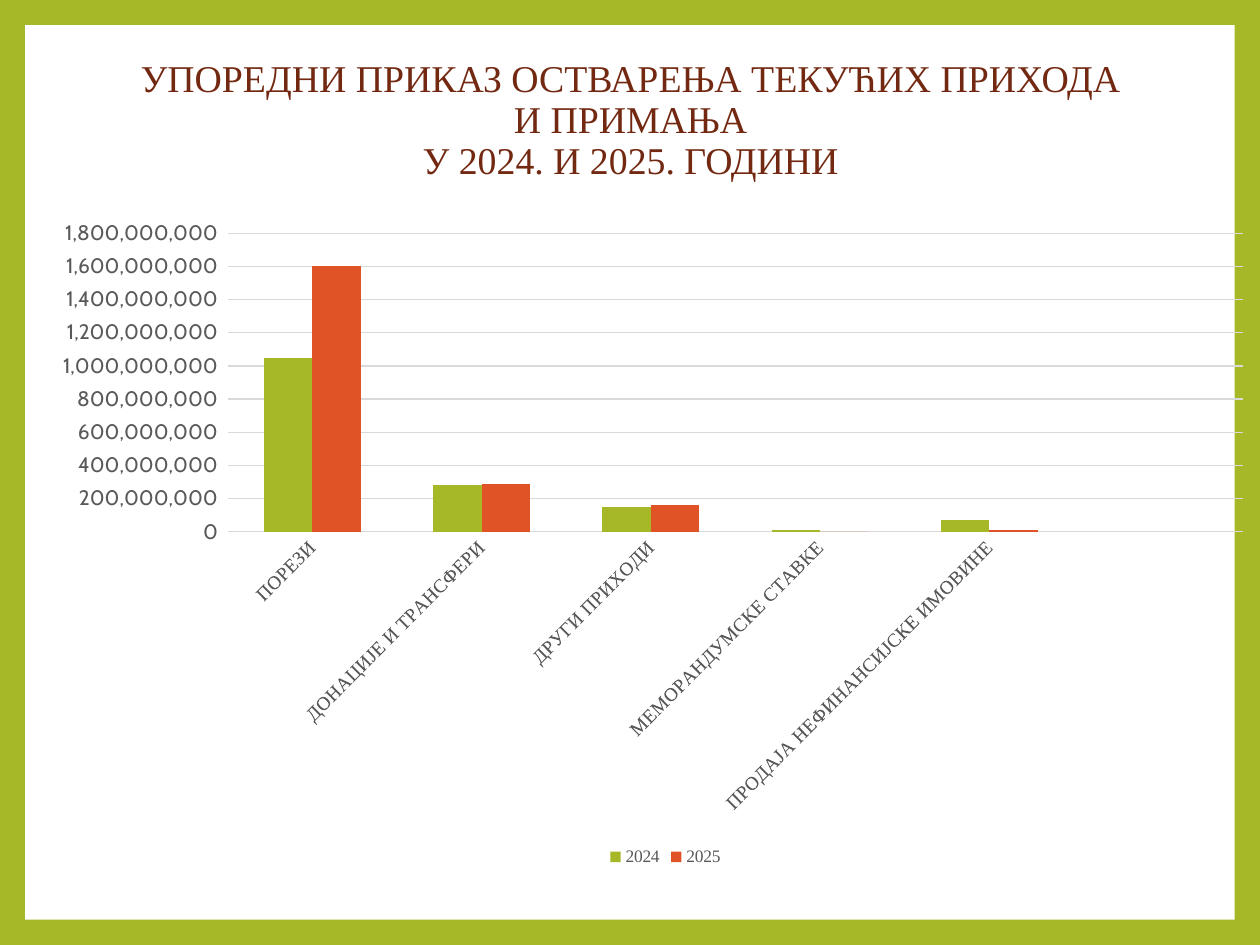
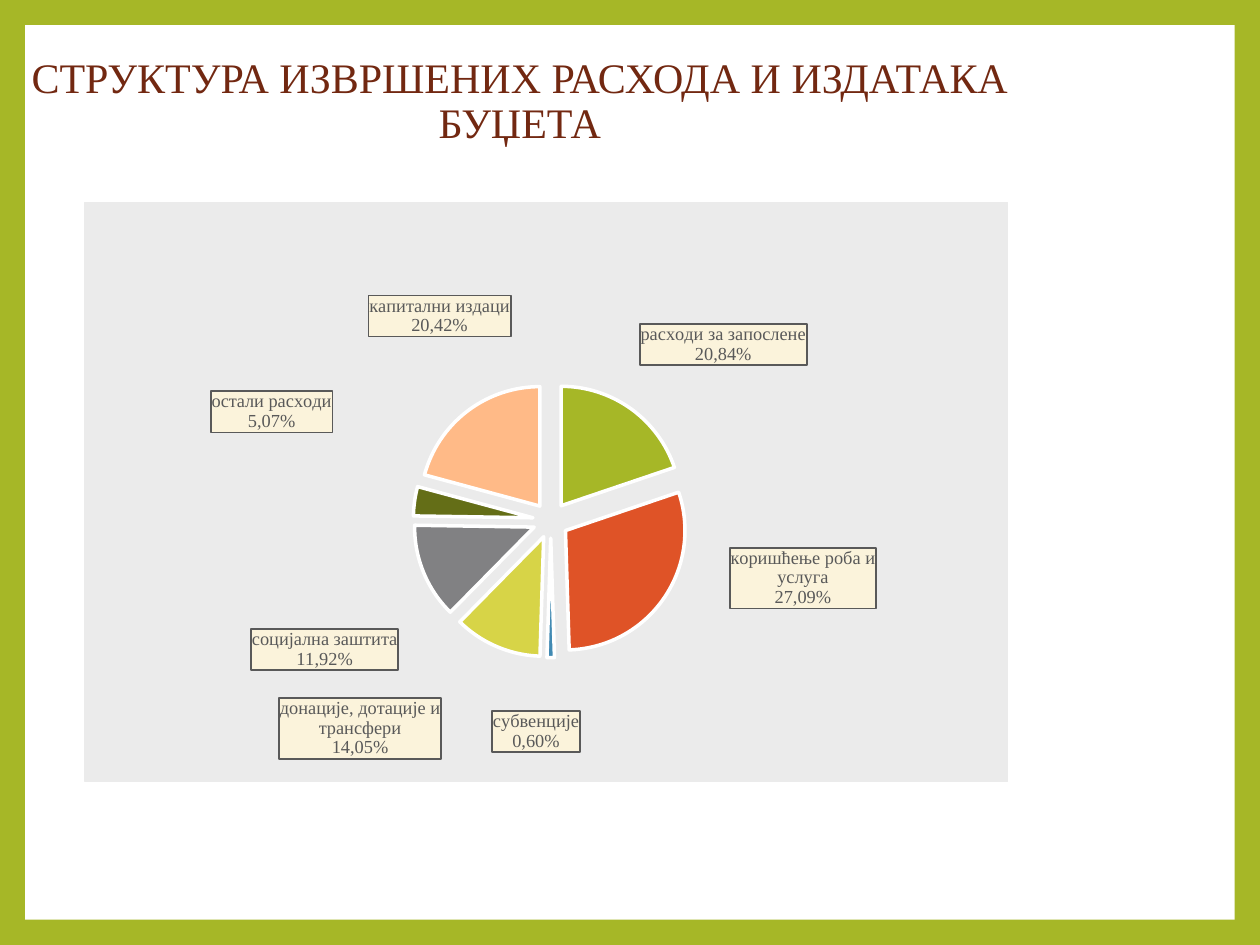
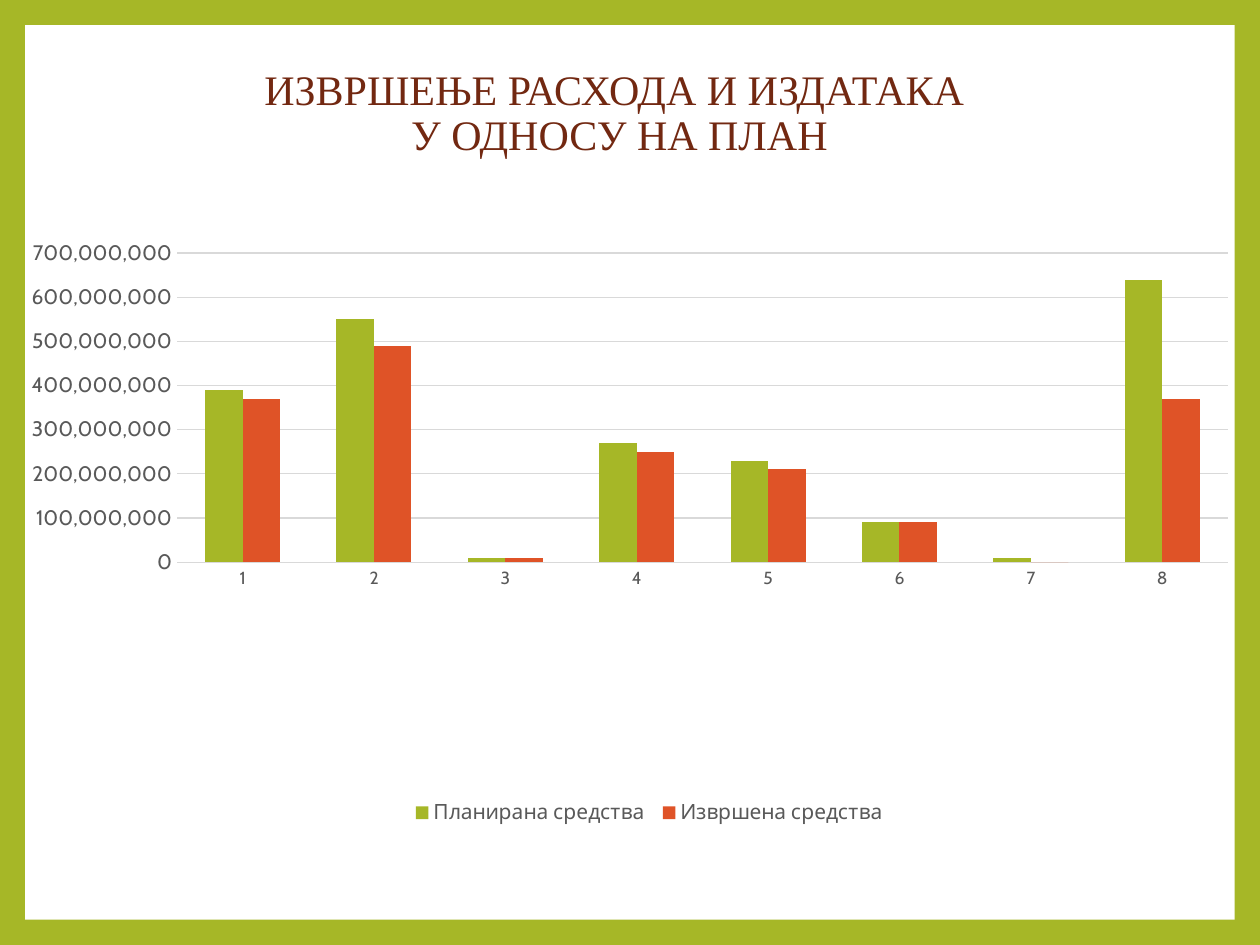
from pptx import Presentation
from pptx.chart.data import CategoryChartData
from pptx.dml.color import RGBColor
from pptx.enum.chart import XL_CHART_TYPE, XL_LABEL_POSITION, XL_LEGEND_POSITION, XL_TICK_MARK
from pptx.enum.shapes import MSO_SHAPE
from pptx.enum.text import MSO_ANCHOR, MSO_AUTO_SIZE, PP_ALIGN
from pptx.oxml import parse_xml
from pptx.oxml.ns import nsdecls, qn
from pptx.util import Inches, Pt

COLUMNS = XL_CHART_TYPE.COLUMN_CLUSTERED
PIE = XL_CHART_TYPE.PIE
OUTSIDE = XL_LABEL_POSITION.OUTSIDE_END
BOTTOM = XL_LEGEND_POSITION.BOTTOM
NO_TICK = XL_TICK_MARK.NONE

GREEN = RGBColor(0xA6, 0xB7, 0x27)
ORANGE = RGBColor(0xDF, 0x53, 0x27)
BLUE = RGBColor(0x41, 0x8A, 0xB3)
YELLOW = RGBColor(0xD7, 0xD4, 0x47)
STEEL = RGBColor(0x81, 0x81, 0x83)
OLIVE = RGBColor(0x64, 0x6E, 0x17)
PEACH = RGBColor(0xFF, 0xBA, 0x87)
BROWN = RGBColor(0x72, 0x28, 0x11)
WHITE = RGBColor(0xFF, 0xFF, 0xFF)
BLACK = RGBColor(0, 0, 0)
TEXT_GREY = RGBColor(0x59, 0x59, 0x59)
GRID_GREY = RGBColor(0xD9, 0xD9, 0xD9)
PANEL_GREY = RGBColor(0xEB, 0xEB, 0xEB)
CREAM = RGBColor(0xFB, 0xF3, 0xDB)
SERIF = "Times New Roman"
SANS = "Cabin"


def set_values(target, values):
    for name, value in values.items():
        if name == "color":
            target.color.rgb = value
        else:
            setattr(target, name, value)


def chart_xml(kind, **values):
    if kind == "box":
        return parse_xml(
            f'<c:spPr {nsdecls("c", "a")}>'
            f'<a:solidFill><a:srgbClr val="{values["fill"]}"/></a:solidFill>'
            f'<a:ln w="{Pt(values["width"])}"><a:solidFill><a:srgbClr val="{values["line"]}"/>'
            '</a:solidFill></a:ln></c:spPr>')
    parts = "".join(f'<c:{name} val="{value}"/>' for name, value in values.items())
    return parse_xml(f'<c:layout {nsdecls("c")}><c:manualLayout>{parts}</c:manualLayout></c:layout>')


deck = Presentation()
deck.slide_width, deck.slide_height = Inches(10), Inches(7.5)
background = deck.slide_master.background.fill
background.solid()
background.fore_color.rgb = GREEN

titles = [
    ("УПОРЕДНИ ПРИКАЗ ОСТВАРЕЊА ТЕКУЋИХ ПРИХОДА И ПРИМАЊА\vУ 2024. И 2025. ГОДИНИ",
     (0.88, 0.42, 8.25, 1.08), 21.6),
    ("СТРУКТУРА ИЗВРШЕНИХ РАСХОДА И ИЗДАТАКА БУЏЕТА", (0, 0.02, 8.25, 1.59), 24),
    ("ИЗВРШЕЊЕ РАСХОДА И ИЗДАТАКА\v У ОДНОСУ НА ПЛАН", (0.75, 0.37, 8.25, 1.08), 24),
]
pages = []
for text, place, size in titles:
    page = deck.slides.add_slide(deck.slide_layouts[5])
    title = page.shapes.title
    title.left, title.top, title.width, title.height = map(Inches, place)
    title.text_frame.text = text
    set_values(title.text_frame, {"word_wrap": True, "auto_size": MSO_AUTO_SIZE.NONE,
                                  "vertical_anchor": MSO_ANCHOR.MIDDLE})
    para = title.text_frame.paragraphs[0]
    set_values(para, {"alignment": PP_ALIGN.CENTER, "line_spacing": 0.9})
    for span in para.runs:
        set_values(span.font, {"name": SERIF, "size": Pt(size), "color": BROWN})
    pages.append(page)

panel = pages[0].shapes.add_shape(
    MSO_SHAPE.RECTANGLE, Inches(0.2), Inches(0.2), Inches(9.6), Inches(7.1))
panel.shadow.inherit = False
panel.fill.solid()
panel.fill.fore_color.rgb = WHITE
panel.line.fill.background()
deck.slide_master.shapes.element.insert(2, panel.element)

MILLION = 1000000
column_charts = [
    {
        "page": pages[0], "place": (0.5, 1.7, 9.5, 5.22),
        "categories": ["ПОРЕЗИ", "ДОНАЦИЈЕ И ТРАНСФЕРИ", "ДРУГИ ПРИХОДИ",
                       "МЕМОРАНДУМСКЕ СТАВКЕ", "ПРОДАЈА НЕФИНАНСИЈСКЕ ИМОВИНЕ"],
        "series": {"2024": [1050, 280, 150, 10, 70, None],
                   "2025": [1600, 290, 160, 0, 10, None]},
        "plot": {"x": 0.132, "y": 0.029, "w": 0.854, "h": 0.454},
        "top": 1800, "step": 200, "number_format": "#,##0_ ;\\-#,##0\\ ",
        "category_font": (SERIF, 11), "legend_font": (SERIF, 10),
        "turn": "-2700000", "legend": None,
    },
    {
        "page": pages[2], "place": (0.25, 1.91, 9.5, 5.22),
        "categories": [str(number) for number in range(1, 9)],
        "series": {"Планирана средства": [390, 550, 10, 270, 230, 90, 10, 640],
                   "Извршена средства": [370, 490, 10, 250, 210, 90, 0, 370]},
        "plot": {"x": 0.119, "y": 0.019, "w": 0.881, "h": 0.47},
        "top": 700, "step": 100, "number_format": "#,##0",
        "category_font": (SANS, 10), "legend_font": (SANS, 12),
        "turn": "0", "legend": {"x": 0.31, "y": 0.845, "w": 0.41, "h": 0.05},
    },
]
for details in column_charts:
    data = CategoryChartData()
    data.categories = details["categories"]
    for name, amounts in details["series"].items():
        data.add_series(name, [None if amount is None else amount * MILLION for amount in amounts])
    chart = details["page"].shapes.add_chart(COLUMNS, *map(Inches, details["place"]), data).chart
    set_values(chart, {"has_title": False, "has_legend": True})
    set_values(chart.font, {"name": SANS, "size": Pt(10), "color": BLACK})
    set_values(chart.legend, {"position": BOTTOM, "include_in_layout": False})
    plot = chart.plots[0]
    set_values(plot, {"gap_width": 150, "vary_by_categories": False})
    for series, color in zip(plot.series, (GREEN, ORANGE)):
        series.format.fill.solid()
        series.format.fill.fore_color.rgb = color

    category_axis, value_axis = chart.category_axis, chart.value_axis
    for axis in (category_axis, value_axis):
        set_values(axis, {"major_tick_mark": NO_TICK, "minor_tick_mark": NO_TICK})
        axis.format.line.fill.background()
    set_values(value_axis, {"minimum_scale": 0, "maximum_scale": details["top"] * MILLION,
                            "major_unit": details["step"] * MILLION, "has_major_gridlines": True})
    set_values(value_axis.major_gridlines.format.line, {"width": Pt(0.75), "color": GRID_GREY})
    set_values(value_axis.tick_labels, {"number_format": details["number_format"],
                                        "number_format_is_linked": False})
    for part, (name, size) in ((category_axis.tick_labels, details["category_font"]),
                               (value_axis.tick_labels, (SANS, 12)),
                               (chart.legend, details["legend_font"])):
        set_values(part.font, {"name": name, "size": Pt(size), "color": TEXT_GREY})

    tree = chart.element
    next(tree.iter(qn("c:catAx"))).find(qn("c:txPr")).find(qn("a:bodyPr")).set("rot", details["turn"])
    area = next(tree.iter(qn("c:plotArea")))
    for old in area.findall(qn("c:layout")):
        area.remove(old)
    area.insert(0, chart_xml("layout", layoutTarget="inner", xMode="edge", yMode="edge",
                             **details["plot"]))
    if details["legend"]:
        legend = next(tree.iter(qn("c:legend")))
        for old in legend.findall(qn("c:layout")):
            legend.remove(old)
        legend.find(qn("c:legendPos")).addnext(
            chart_xml("layout", xMode="edge", yMode="edge", **details["legend"]))

slices = [
    ("расходи за запослене", 20, "20,84%", GREEN, (0.005, -0.065)),
    ("коришћење роба и услуга", 30, "27,09%", ORANGE, (0.065, -0.095)),
    ("", None, None, None, None),
    ("субвенције", 1, "0,60%", BLUE, (-0.016, 0.079)),
    ("донације, дотације и трансфери", 12, "14,05%", YELLOW, (-0.057, 0.077)),
    ("социјална заштита", 13, "11,92%", STEEL, (-0.02, 0.093)),
    ("остали расходи", 4, "5,07%", OLIVE, (-0.081, -0.117)),
    ("", None, None, None, None),
    ("капитални издаци", 21, "20,42%", PEACH, (0.052, -0.119)),
]
data = CategoryChartData()
data.categories = [name for name, *_ in slices]
data.add_series("Series 1", [amount for _, amount, *_ in slices])
chart = pages[1].shapes.add_chart(
    PIE, Inches(0.67), Inches(1.6), Inches(7.33), Inches(4.61), data).chart
set_values(chart, {"has_title": False, "has_legend": False})
set_values(chart.font, {"name": SANS, "size": Pt(10), "color": BLACK})
chart.plots[0].vary_by_categories = True
series = chart.plots[0].series[0]
label_font = {"name": SERIF, "size": Pt(10.5), "color": TEXT_GREY}
set_values(series.data_labels, {"show_percentage": True, "show_category_name": True,
                                "show_value": False, "position": OUTSIDE,
                                "number_format": "#,##0", "number_format_is_linked": False})
set_values(series.data_labels.font, label_font)
offsets = []
for index, (name, amount, share, color, offset) in enumerate(slices):
    if amount is None:
        continue
    point = series.points[index]
    point.format.fill.solid()
    point.format.fill.fore_color.rgb = color
    set_values(point.format.line, {"width": Pt(2), "color": WHITE})
    label = point.data_label
    label.text_frame.text = f"{name}\n{share}"
    for para in label.text_frame.paragraphs:
        for span in para.runs:
            set_values(span.font, label_font)
    label.position = OUTSIDE
    offsets.append(offset)

tree = chart.element
for label, (across, down) in zip(tree.iter(qn("c:dLbl")), offsets):
    for old in label.findall(qn("c:layout")):
        label.remove(old)
    label.find(qn("c:idx")).addnext(chart_xml("layout", x=across, y=down))
    for old in label.findall(qn("c:spPr")):
        label.remove(old)
    label.find(qn("c:dLblPos")).addprevious(
        chart_xml("box", fill=CREAM, line=TEXT_GREY, width=1))
for leader in tree.iter(qn("c:showLeaderLines")):
    leader.set("val", "0")
next(tree.iter(qn("c:dPt"))).addprevious(parse_xml(f'<c:explosion {nsdecls("c")} val="15"/>'))
area = next(tree.iter(qn("c:plotArea")))
for old in area.findall(qn("c:layout")):
    area.remove(old)
area.insert(0, chart_xml("layout", layoutTarget="inner", xMode="edge", yMode="edge",
                         x=0.237, y=0.312, w=0.536, h=0.474))
tree.find(qn("c:txPr")).addprevious(
    chart_xml("box", fill=PANEL_GREY, line=PANEL_GREY, width=0.75))

deck.save("out.pptx")
